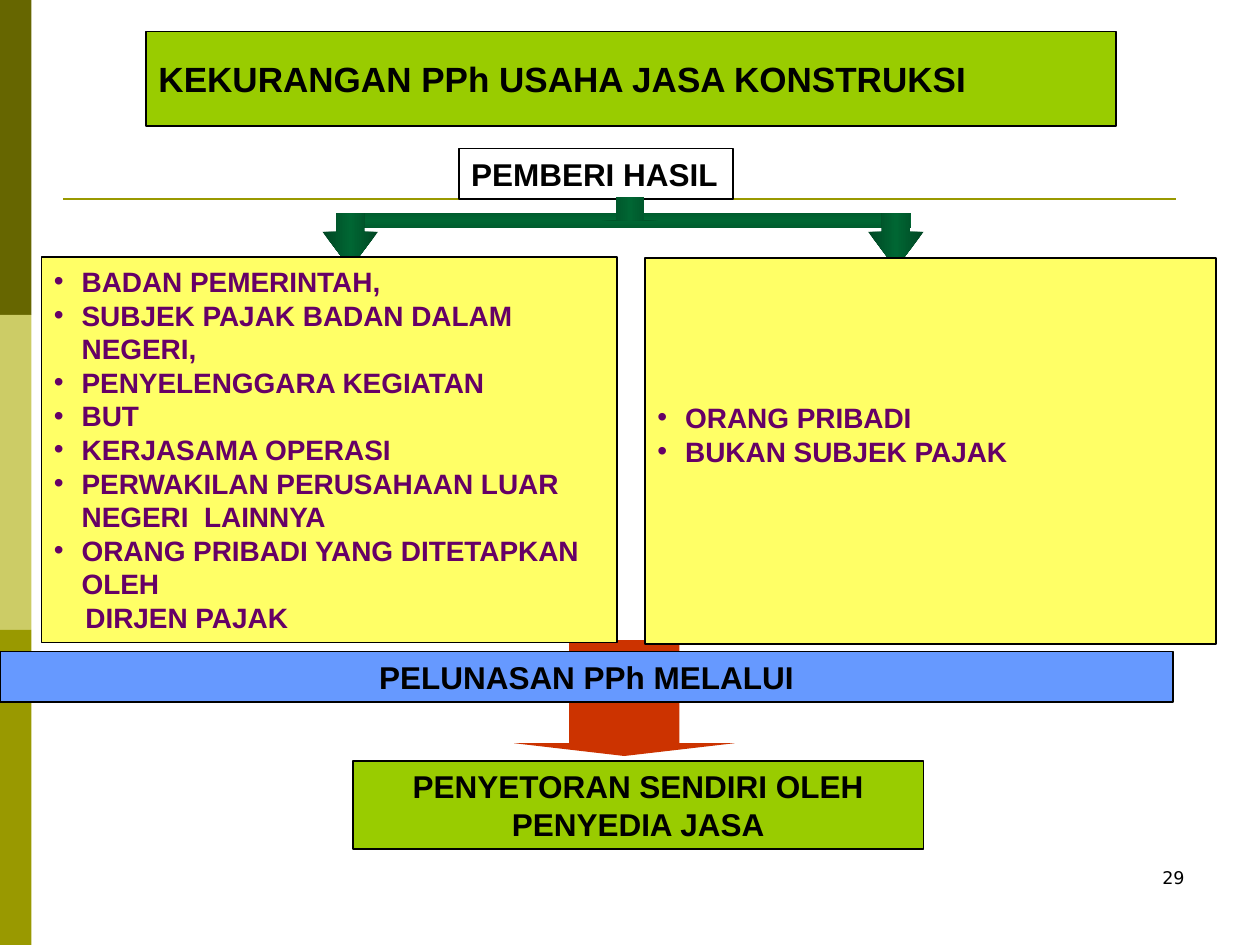
import copy

import pptx
import pptx.dml.color
import pptx.enum.shapes
import pptx.enum.text
import pptx.oxml.ns
import pptx.util
from lxml import etree

Inches, Pt, qn = pptx.util.Inches, pptx.util.Pt, pptx.oxml.ns.qn
SHAPE = pptx.enum.shapes.MSO_SHAPE
ALIGN = pptx.enum.text.PP_ALIGN
ANCHOR = pptx.enum.text.MSO_ANCHOR

WIDTH, HEIGHT = 10, 7.5
COLORS = {
    "olive_dark": "666600", "olive_light": "CCCC66", "olive": "999900",
    "lime": "99CC00", "blue": "6699FF", "yellow": "FFFF66", "red": "CC3300",
    "green": "006633", "green_edge": "004724", "green_bar_edge": "005C2E",
    "purple": "660066", "black": "000000",
}
SIDEBAR = ["olive_dark", "olive_light", "olive"]

# text, box (left, top, width, height), fill, size, alignment, anchor
TITLE = ("KEKURANGAN PPh USAHA JASA KONSTRUKSI", (1.16, 0.25, 7.7, 0.75),
         "lime", 20, ALIGN.LEFT, ANCHOR.MIDDLE)
RESULT = ("PENYETORAN SENDIRI OLEH PENYEDIA JASA", (2.8, 6.04, 4.53, 0.7),
          "lime", 18, ALIGN.CENTER, ANCHOR.TOP)
PAYER = ("PEMBERI HASIL", (3.64, 1.18, 2.18, 0.4),
         None, 18, ALIGN.LEFT, ANCHOR.TOP)
SETTLEMENT = ("PELUNASAN PPh MELALUI", (0, 5.17, 9.31, 0.4),
              "blue", 18, ALIGN.CENTER, ANCHOR.TOP)

# box, top inset, bulleted items, unbulleted closing line
PANELS = [
    ((5.12, 2.05, 4.53, 3.06), 1.13,
     ["ORANG PRIBADI", "BUKAN SUBJEK PAJAK"], None),
    ((0.33, 2.04, 4.57, 3.06), 0.06,
     ["BADAN PEMERINTAH,", "SUBJEK PAJAK BADAN DALAM NEGERI,",
      "PENYELENGGARA KEGIATAN", "BUT", "KERJASAMA OPERASI",
      "PERWAKILAN PERUSAHAAN LUAR NEGERI  LAINNYA",
      "ORANG PRIBADI YANG DITETAPKAN OLEH"], "DIRJEN PAJAK"),
]
PAGE_NUMBER = "29"

FORK_TOP, ARM = 1.69, 0.44
FORK = [  # kind, box, edge colour, gradient angle, adjustments
    (SHAPE.RECTANGLE, (2.67, FORK_TOP, 4.56, 0.12), "green_bar_edge", 90, ()),
    (SHAPE.DOWN_ARROW, (4.78, 1.56, ARM, 0.19), "green_edge", 0, (0.5, 0)),
] + [
    (SHAPE.DOWN_ARROW, (left, FORK_TOP, ARM, ARM), "green_edge", 0, (0.5, 0.66))
    for left in (6.89, 2.56)
]


def rgb(name):
    return pptx.dml.color.RGBColor.from_string(COLORS[name])


def add_block(slide, kind, box, fill=None, outlined=False, adjustments=()):
    block = slide.shapes.add_shape(kind, *map(Inches, box))
    block.shadow.inherit = False
    for index, value in enumerate(adjustments):
        block.adjustments[index] = value
    if fill:
        block.fill.solid()
        block.fill.fore_color.rgb = rgb(fill)
    else:
        block.fill.background()
    if outlined:
        block.line.color.rgb = rgb("black")
        block.line.width = Pt(1)
    else:
        block.line.fill.background()
    return block


def shade(block, edge, angle):
    """Fill with a gradient that is green in the middle and darker at both ends."""
    block.fill.gradient()
    block.fill.gradient_angle = angle
    stops = block._element.spPr.find(qn("a:gradFill")).find(qn("a:gsLst"))
    stops.append(copy.deepcopy(stops[-1]))
    looks = [(0, edge), (0.5, "green"), (1, edge)]
    for stop, (position, color) in zip(block.fill.gradient_stops, looks):
        stop.position = position
        stop.color.rgb = rgb(color)


def write(paragraph, text, size, color="black", font="Arial", bold=True):
    run = paragraph.add_run()
    run.text = text
    run.font.size, run.font.name, run.font.bold = Pt(size), font, bold
    run.font.color.rgb = rgb(color)


def set_indent(paragraph, margin, first=0, bullet=None):
    properties = paragraph._p.get_or_add_pPr()
    properties.set("marL", str(Inches(margin)))
    properties.set("indent", str(Inches(first)))
    if bullet:
        etree.SubElement(properties, qn("a:buFont"), typeface="Arial")
        etree.SubElement(properties, qn("a:buChar"), char=bullet)


def add_label(slide, text, box, fill, size, alignment, anchor):
    frame = add_block(slide, SHAPE.RECTANGLE, box, fill, True).text_frame
    frame.word_wrap = text != PAYER[0]
    frame.vertical_anchor = anchor
    frame.paragraphs[0].alignment = alignment
    write(frame.paragraphs[0], text, size)


def add_panel(slide, box, inset, items, closing):
    frame = add_block(slide, SHAPE.RECTANGLE, box, "yellow", True).text_frame
    frame.word_wrap = True
    frame.vertical_anchor = ANCHOR.TOP
    frame.margin_top = Inches(inset)
    lines = [(item, (0.22, -0.22, "•")) for item in items]
    if closing:
        lines.append((closing, (0.25,)))
    for index, (text, indent) in enumerate(lines):
        paragraph = frame.add_paragraph() if index else frame.paragraphs[0]
        paragraph.alignment = ALIGN.LEFT
        set_indent(paragraph, *indent)
        write(paragraph, text, 16, "purple")


def main():
    deck = pptx.Presentation()
    deck.slide_width, deck.slide_height = Inches(WIDTH), Inches(HEIGHT)
    slide = deck.slides.add_slide(deck.slide_layouts[6])

    band = HEIGHT / len(SIDEBAR)
    for row, color in enumerate(SIDEBAR):
        add_block(slide, SHAPE.RECTANGLE, (0, row * band, 0.25, band), color)
    rule = slide.shapes.add_connector(
        pptx.enum.shapes.MSO_CONNECTOR.STRAIGHT,
        *map(Inches, (0.5, 1.58, 9.33, 1.58)))
    rule.line.color.rgb = rgb("olive")
    rule.line.width = Pt(1.5)
    etree.SubElement(rule._element.spPr, qn("a:effectLst"))

    number = slide.shapes.add_textbox(*map(Inches, (7.17, 6.83, 2.33, 0.5)))
    number.text_frame.word_wrap = True
    number.text_frame.paragraphs[0].alignment = ALIGN.RIGHT
    write(number.text_frame.paragraphs[0], PAGE_NUMBER, 10,
          font="DejaVu Sans", bold=False)

    for label in (TITLE, RESULT, PAYER):
        add_label(slide, *label)
    for kind, box, edge, angle, adjustments in FORK:
        shade(add_block(slide, kind, box, adjustments=adjustments), edge, angle)
    add_block(slide, SHAPE.DOWN_ARROW, (4.08, 5.08, 1.75, 0.92), "red",
              adjustments=(0.5, 0.11))
    add_label(slide, *SETTLEMENT)
    for panel in PANELS:
        add_panel(slide, *panel)

    deck.save("out.pptx")


if __name__ == "__main__":
    main()
